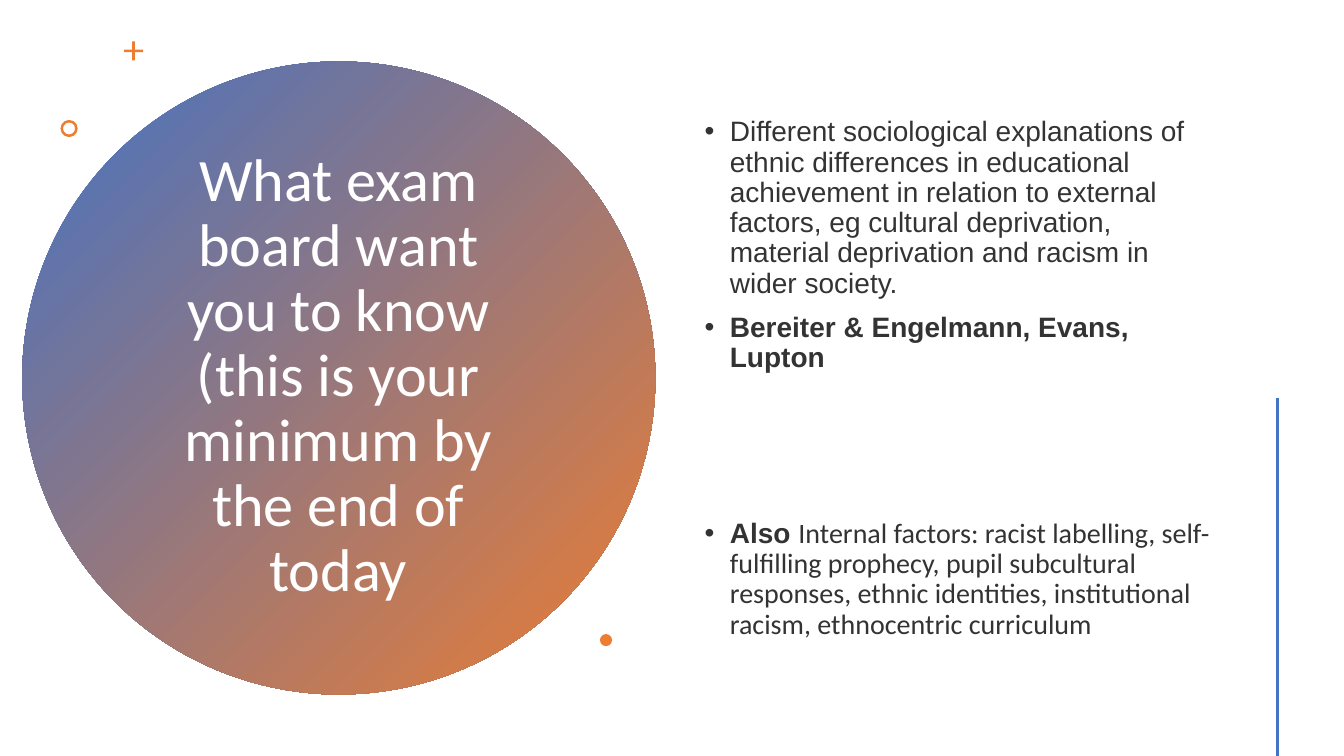
from dataclasses import dataclass

from lxml import etree
from pptx import Presentation
from pptx.dml.color import RGBColor
from pptx.enum.shapes import MSO_CONNECTOR, MSO_SHAPE
from pptx.enum.text import MSO_ANCHOR, MSO_AUTO_SIZE, PP_ALIGN
from pptx.oxml.ns import qn
from pptx.util import Inches, Pt

OVAL, RING, CROSS = MSO_SHAPE.OVAL, MSO_SHAPE.DONUT, MSO_SHAPE.CROSS
STRAIGHT = MSO_CONNECTOR.STRAIGHT
MIDDLE = MSO_ANCHOR.MIDDLE
CENTER, LEFT = PP_ALIGN.CENTER, PP_ALIGN.LEFT
NO_AUTOFIT = MSO_AUTO_SIZE.NONE

SLIDE_WIDTH, SLIDE_HEIGHT = Inches(13.33), Inches(7.5)
TITLE_ONLY_LAYOUT = 5


@dataclass(frozen=True)
class Theme:
    blue: RGBColor = RGBColor(0x44, 0x72, 0xC4)
    orange: RGBColor = RGBColor(0xED, 0x7D, 0x31)
    white: RGBColor = RGBColor(0xFF, 0xFF, 0xFF)
    ink: RGBColor = RGBColor(0x33, 0x33, 0x33)
    title_size: Pt = Pt(43)
    body_size: Pt = Pt(20)
    line_width: Pt = Pt(2)
    line_spacing: float = 0.9
    indent: Inches = Inches(0.25)
    heading_font: str = "Calibri"
    body_font: str = "Arial"


THEME = Theme()


@dataclass(frozen=True)
class Box:
    """A rectangle in percent of the slide's width and height."""
    left: float
    top: float
    width: float
    height: float

    def lengths(self) -> tuple[int, int, int, int]:
        return (across(self.left), down(self.top),
                across(self.width), down(self.height))


@dataclass(frozen=True)
class Ornament:
    kind: int
    box: Box
    adjustment: float | None = None


@dataclass(frozen=True)
class Phrase:
    text: str
    font: str = THEME.body_font
    bold: bool = False


@dataclass(frozen=True)
class Bullet:
    phrases: tuple[Phrase, ...]
    space_before: int = 10


TITLE = "What exam board want you to know (this is your minimum by the end of today"
TITLE_BOX = Box(10.2, 18.8, 29.93, 62.27)
DISC_BOX = Box(1.65, 8.13, 47.11, 83.73)
BODY_BOX = Box(51.69, 7.6, 39.16, 85.07)
RULE_LEFT, RULE_TOP, RULE_BOTTOM = 95.05, 52.67, 100

ORNAMENTS = (
    Ornament(CROSS, Box(9.23, 5.47, 1.43, 2.53), 0.43),
    Ornament(RING, Box(4.5, 15.87, 1.28, 2.27), 0.15),
    Ornament(OVAL, Box(44.64, 83.87, 0.9, 1.6)),
)

BULLETS = (
    Bullet((Phrase(
        "Different sociological explanations of ethnic differences in "
        "educational achievement in relation to external factors, eg cultural "
        "deprivation, material deprivation and racism in wider society."),)),
    Bullet((Phrase("Bereiter & Engelmann, Evans, Lupton", bold=True),)),
    Bullet((
        Phrase("Also ", bold=True),
        Phrase("Internal factors: racist labelling, self-fulfilling prophecy, "
               "pupil subcultural responses, ethnic identities, institutional "
               "racism, ethnocentric curriculum", THEME.heading_font),
    ), space_before=104),
)


def across(percent: float) -> int:
    return round(SLIDE_WIDTH * percent / 100)


def down(percent: float) -> int:
    return round(SLIDE_HEIGHT * percent / 100)


def add_plain_shape(slide, kind: int, box: Box):
    shape = slide.shapes.add_shape(kind, *box.lengths())
    shape.shadow.inherit = False
    shape.line.fill.background()
    return shape


def add_run(paragraph, phrase: Phrase, size: Pt, color: RGBColor) -> None:
    run = paragraph.add_run()
    run.text = phrase.text
    run.font.name = phrase.font
    run.font.bold = phrase.bold
    run.font.size = size
    run.font.color.rgb = color


def prepare_frame(shape):
    frame = shape.text_frame
    frame.word_wrap = True
    frame.auto_size = NO_AUTOFIT
    frame.vertical_anchor = MIDDLE
    return frame


def add_disc(slide) -> None:
    disc = add_plain_shape(slide, OVAL, DISC_BOX)
    disc.fill.gradient()
    disc.fill.gradient_angle = 315
    for stop, color in zip(disc.fill.gradient_stops, (THEME.blue, THEME.orange)):
        stop.color.rgb = color
    # The disc lies behind the title
    slide.shapes.title.element.addprevious(disc.element)


def format_title(slide) -> None:
    title = slide.shapes.title
    title.left, title.top, title.width, title.height = TITLE_BOX.lengths()
    paragraph = prepare_frame(title).paragraphs[0]
    paragraph.alignment = CENTER
    paragraph.line_spacing = THEME.line_spacing
    add_run(paragraph, Phrase(TITLE, THEME.heading_font), THEME.title_size, THEME.white)


def add_ornament(slide, ornament: Ornament) -> None:
    shape = add_plain_shape(slide, ornament.kind, ornament.box)
    shape.fill.solid()
    shape.fill.fore_color.rgb = THEME.orange
    if ornament.adjustment is not None:
        shape.adjustments[0] = ornament.adjustment


def add_bullets(slide) -> None:
    frame = prepare_frame(slide.shapes.add_textbox(*BODY_BOX.lengths()))
    for index, bullet in enumerate(BULLETS):
        paragraph = frame.add_paragraph() if index else frame.paragraphs[0]
        paragraph.alignment = LEFT
        paragraph.line_spacing = THEME.line_spacing
        paragraph.space_before = Pt(bullet.space_before)
        properties = paragraph._p.get_or_add_pPr()
        properties.set("marL", str(THEME.indent))
        properties.set("indent", str(-THEME.indent))
        etree.SubElement(properties, qn("a:buFont")).set("typeface", THEME.body_font)
        etree.SubElement(properties, qn("a:buChar")).set("char", "•")
        for phrase in bullet.phrases:
            add_run(paragraph, phrase, THEME.body_size, THEME.ink)


def add_rule(slide) -> None:
    left = across(RULE_LEFT)
    rule = slide.shapes.add_connector(
        STRAIGHT, left, down(RULE_TOP), left, down(RULE_BOTTOM))
    rule.line.color.rgb = THEME.blue
    rule.line.width = THEME.line_width
    etree.SubElement(rule.element.spPr, qn("a:effectLst"))


def main() -> None:
    presentation = Presentation()
    presentation.slide_width, presentation.slide_height = SLIDE_WIDTH, SLIDE_HEIGHT
    slide = presentation.slides.add_slide(
        presentation.slide_layouts[TITLE_ONLY_LAYOUT])

    # Title on its disc
    add_disc(slide)
    format_title(slide)

    # Small ornaments around the disc
    for ornament in ORNAMENTS:
        add_ornament(slide, ornament)

    # Bullet list and side rule
    add_bullets(slide)
    add_rule(slide)

    presentation.save("out.pptx")


if __name__ == "__main__":
    main()
